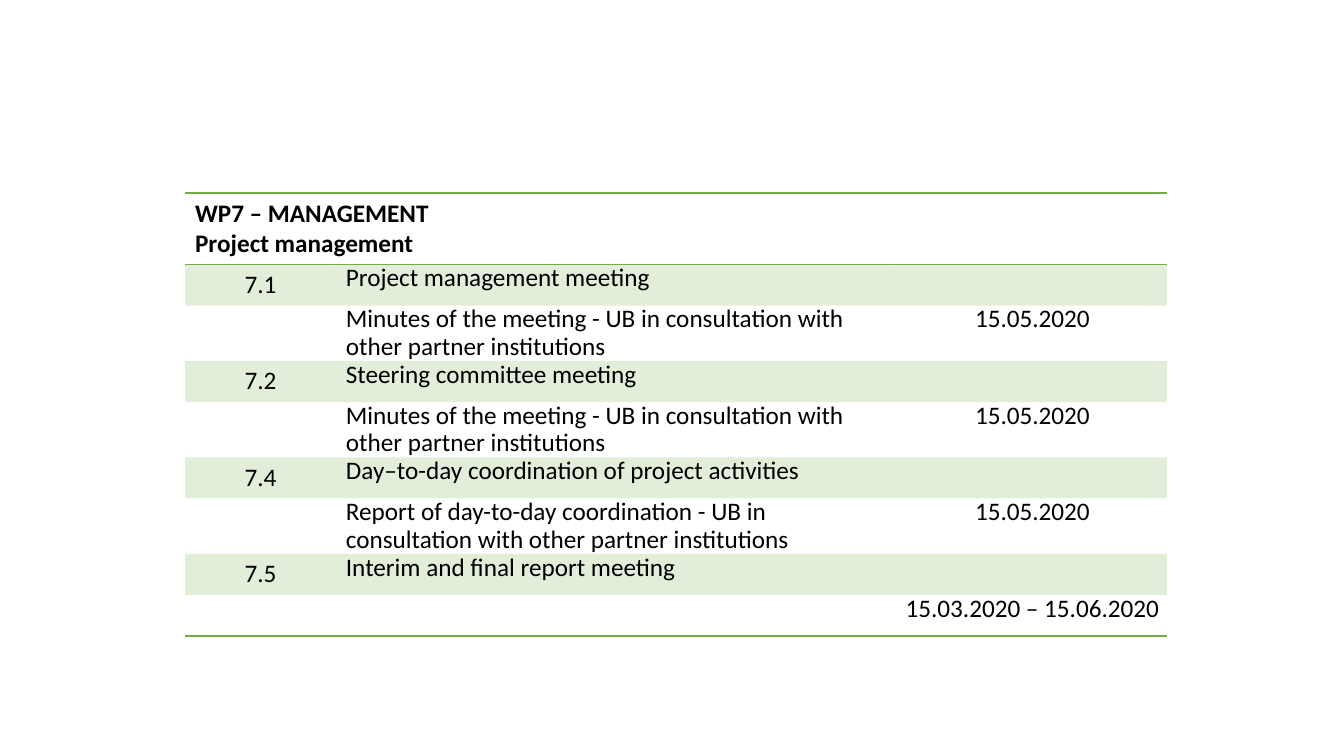
from dataclasses import dataclass

from lxml import etree
from pptx import Presentation
from pptx.dml.color import RGBColor
from pptx.enum.text import MSO_ANCHOR, PP_ALIGN
from pptx.oxml.ns import qn
from pptx.util import Emu, Pt

CENTER, LEFT = PP_ALIGN.CENTER, PP_ALIGN.LEFT
TOP, MIDDLE = MSO_ANCHOR.TOP, MSO_ANCHOR.MIDDLE
EMU_PER_PX = 914400 / 100.8
NO_STYLE_NO_GRID = "{2D5ABB26-0587-4C30-8999-92F81FD0307C}"


@dataclass(frozen=True)
class Theme:
    font: str = "Calibri"
    size: int = 18
    ink: str = "000000"
    accent: str = "70AD47"
    band_opacity: int = 20
    rule_width: int = 1
    line_spacing: float = 0.9


def px(length):
    return Emu(round(length * EMU_PER_PX))


class SlideBuilder:
    def __init__(self, slide, theme):
        self.slide = slide
        self.theme = theme

    def table(self, left, top, columns, row_height, row_count):
        frame = self.slide.shapes.add_table(
            row_count, len(columns), px(left), px(top),
            px(sum(columns)), px(row_height * row_count))
        table = frame.table
        table.first_row = False
        table.horz_banding = False
        table._tbl.tblPr.find(qn("a:tableStyleId")).text = NO_STYLE_NO_GRID
        for column, width in zip(table.columns, columns):
            column.width = px(width)
        for row in table.rows:
            row.height = px(row_height)
            for cell in row.cells:
                cell.fill.background()
        return table

    def text(self, cell, words, bold=False):
        cell.text_frame.text = words
        for run in cell.text_frame.paragraphs[0].runs:
            run.font.name = self.theme.font
            run.font.size = Pt(self.theme.size)
            run.font.bold = bold
            run.font.color.rgb = RGBColor.from_string(self.theme.ink)

    def entry(self, cell, words, align=LEFT, anchor=TOP, indent=0):
        if not words:
            return
        self.text(cell, words)
        cell.margin_left = cell.margin_right = px(4)
        cell.margin_top = cell.margin_bottom = 0
        cell.vertical_anchor = anchor
        paragraph = cell.text_frame.paragraphs[0]
        if indent:
            properties = paragraph._p.get_or_add_pPr()
            properties.set("marL", str(px(indent)))
            properties.set("indent", "0")
            stops = etree.SubElement(properties, qn("a:tabLst"))
            etree.SubElement(stops, qn("a:tab"), pos=str(px(16)), algn="l")
        paragraph.alignment = align
        paragraph.line_spacing = self.theme.line_spacing

    def band(self, cell):
        cell.fill.solid()
        cell.fill.fore_color.rgb = RGBColor.from_string(self.theme.accent)
        color = cell._tc.tcPr.find(".//" + qn("a:srgbClr"))
        etree.SubElement(color, qn("a:alpha"), val=str(self.theme.band_opacity * 1000))

    def rules(self, cell, *sides):
        properties = cell._tc.get_or_add_tcPr()
        for position, side in enumerate(sides):
            line = etree.Element(qn("a:ln" + side), w=str(Pt(self.theme.rule_width)))
            fill = etree.SubElement(line, qn("a:solidFill"))
            etree.SubElement(fill, qn("a:srgbClr"), val=self.theme.accent)
            properties.insert(position, line)


WORK_PACKAGE = "WP7 – MANAGEMENT\vProject management"
MINUTES = "Minutes of the meeting - UB in consultation with other partner institutions"
ACTIVITIES = [
    ("7.1", "Project management meeting", MINUTES, "15.05.2020"),
    ("7.2", "Steering committee meeting", MINUTES, "15.05.2020"),
    ("7.4", "Day–to-day coordination of project activities",
     "Report of day-to-day coordination - UB in consultation with other partner institutions",
     "15.05.2020"),
    ("7.5", "Interim and final report meeting", "", "15.03.2020 – 15.06.2020"),
]


def main():
    presentation = Presentation()
    presentation.slide_width, presentation.slide_height = px(1344), px(756)
    slide = presentation.slides.add_slide(presentation.slide_layouts[6])
    builder = SlideBuilder(slide, Theme())

    plan = builder.table(185, 193, (151, 556, 275), 41, 1 + 2 * len(ACTIVITIES))
    heading = plan.cell(0, 0)
    heading.merge(plan.cell(0, 2))
    builder.text(heading, WORK_PACKAGE, bold=True)

    for index, (number, activity, outcome, date) in enumerate(ACTIVITIES):
        activity_row = 1 + 2 * index
        outcome_row = activity_row + 1
        builder.entry(plan.cell(activity_row, 0), number, CENTER, MIDDLE)
        builder.entry(plan.cell(activity_row, 1), activity, indent=6)
        builder.entry(plan.cell(outcome_row, 1), outcome, indent=6)
        builder.entry(plan.cell(outcome_row, 2), date, CENTER, indent=6)
        for column in range(3):
            builder.band(plan.cell(activity_row, column))

    for column in range(3):
        builder.rules(plan.cell(0, column), "T", "B")
        builder.rules(plan.cell(2 * len(ACTIVITIES), column), "B")

    presentation.save("out.pptx")


if __name__ == "__main__":
    main()
